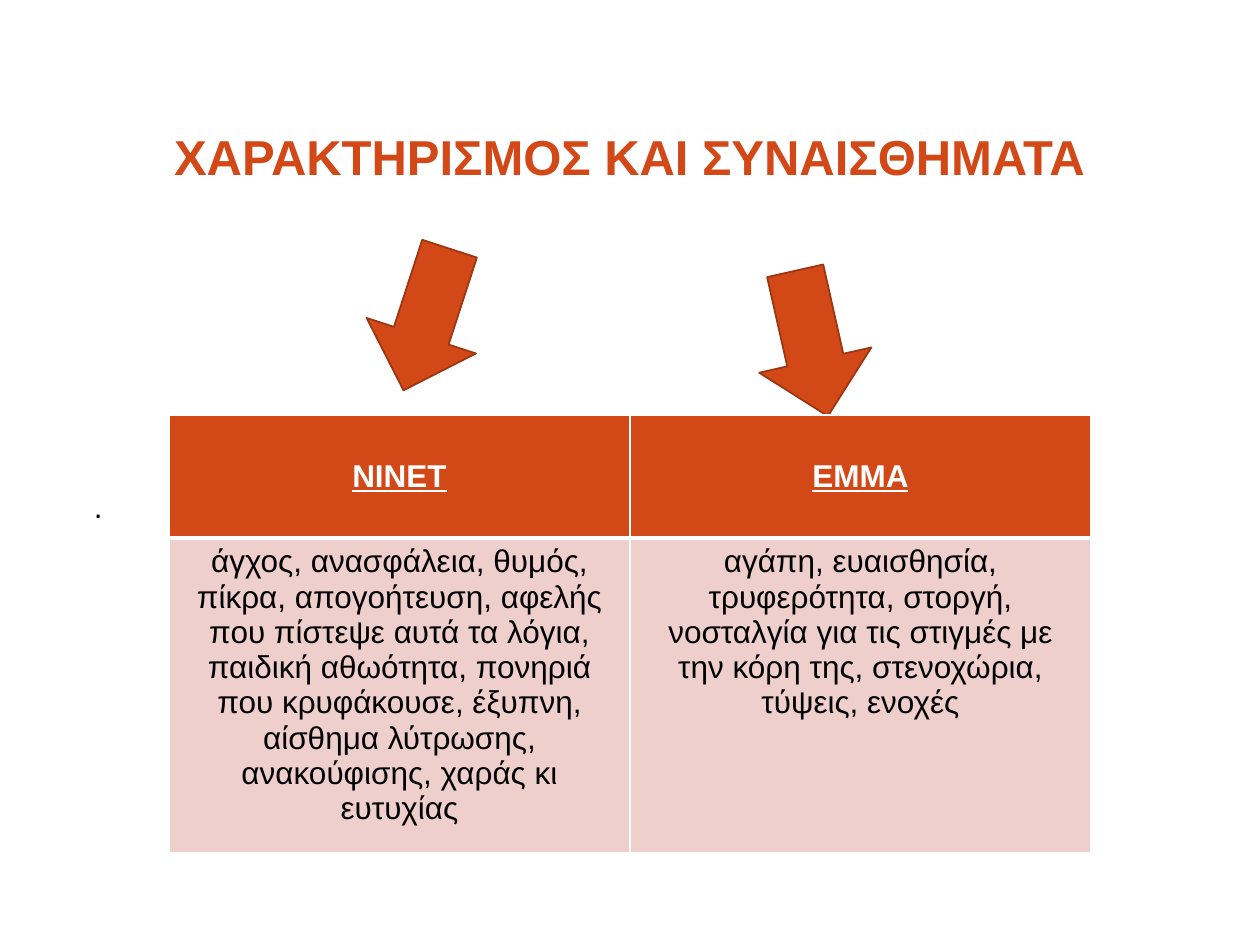
from dataclasses import dataclass

from lxml import etree
from pptx import Presentation
from pptx.dml.color import RGBColor
from pptx.enum.shapes import MSO_SHAPE
from pptx.enum.text import MSO_ANCHOR, PP_ALIGN
from pptx.oxml.ns import qn
from pptx.util import Emu, Pt

EMU_PER_PX = 914400 / 126
RIGHT_ARROW = MSO_SHAPE.RIGHT_ARROW
CENTER, LEFT = PP_ALIGN.CENTER, PP_ALIGN.LEFT
TOP, MIDDLE, BOTTOM = MSO_ANCHOR.TOP, MSO_ANCHOR.MIDDLE, MSO_ANCHOR.BOTTOM

ORANGE, DARK_ORANGE, PINK = "D34817", "9C3511", "EFCFCC"
WHITE, BLACK = "FFFFFF", "000000"


@dataclass
class Arrow:
    left: int
    top: int
    rotation: float


@dataclass
class Column:
    heading: str
    feelings: list[str]


ARROWS = [Arrow(737, 286, 77.3), Arrow(352, 262, 108)]
COLUMNS = [
    Column("ΝΙΝΕΤ", [
        "άγχος, ανασφάλεια, θυμός, πίκρα, απογοήτευση, αφελής που πίστεψε "
        "αυτά τα λόγια, παιδική αθωότητα, πονηριά που κρυφάκουσε, έξυπνη, "
        "αίσθημα λύτρωσης, ανακούφισης, χαράς κι ευτυχίας",
    ]),
    Column("ΕΜΜΑ", [
        "αγάπη, ευαισθησία, τρυφερότητα, στοργή,",
        "νοσταλγία για τις στιγμές με την κόρη της, στενοχώρια, τύψεις, ενοχές",
    ]),
]


def px(length: int) -> Emu:
    return Emu(round(length * EMU_PER_PX))


def color(hex_code: str) -> RGBColor:
    return RGBColor.from_string(hex_code)


def write_text(frame, lines: list[str], *, size: int = 18, fill: str = BLACK,
               bold: bool = False, underline: bool = False,
               align=CENTER, spacing: float = 1.0) -> None:
    for index, line in enumerate(lines):
        paragraph = frame.add_paragraph() if index else frame.paragraphs[0]
        paragraph.alignment = align
        paragraph.line_spacing = spacing
        run = paragraph.add_run()
        run.text = line
        run.font.name = "Arial"
        run.font.size = Pt(size)
        run.font.bold = bold
        run.font.underline = underline
        run.font.color.rgb = color(fill)


def add_text_box(slide, left: int, top: int, width: int, height: int,
                 text: str, *, anchor=TOP, bottom_inset: int = 0, **text_format) -> None:
    frame = slide.shapes.add_textbox(px(left), px(top), px(width), px(height)).text_frame
    frame.word_wrap = True
    frame.vertical_anchor = anchor
    frame.margin_left = frame.margin_right = frame.margin_top = 0
    frame.margin_bottom = px(bottom_inset)
    write_text(frame, [text], **text_format)


def add_arrow(slide, arrow: Arrow) -> None:
    shape = slide.shapes.add_shape(
        RIGHT_ARROW, px(arrow.left), px(arrow.top), px(149), px(115))
    shape.rotation = arrow.rotation
    shape.shadow.inherit = False
    shape.fill.solid()
    shape.fill.fore_color.rgb = color(ORANGE)
    shape.line.color.rgb = color(DARK_ORANGE)
    shape.line.width = Pt(1)


def style_cell(cell, fill: str, **border_widths: int) -> None:
    """Draw white borders (widths in points by side L, R, T, B), then fill."""
    properties = cell._tc.get_or_add_tcPr()
    for side, width in border_widths.items():
        line = etree.SubElement(properties, qn(f"a:ln{side}"), w=str(Pt(width)))
        solid = etree.SubElement(line, qn("a:solidFill"))
        etree.SubElement(solid, qn("a:srgbClr"), val=WHITE)
    cell.fill.solid()
    cell.fill.fore_color.rgb = color(fill)


def add_feelings_table(slide) -> None:
    table = slide.shapes.add_table(
        2, len(COLUMNS), px(169), px(415), px(922), px(417)).table
    for row, height in zip(table.rows, (123, 294)):
        row.height = px(height)
    for index, column in enumerate(COLUMNS):
        heading, body = table.cell(0, index), table.cell(1, index)
        style_cell(heading, ORANGE, L=1, R=1, T=1, B=3)
        heading.vertical_anchor = MIDDLE
        write_text(heading.text_frame, [column.heading],
                   fill=WHITE, bold=True, underline=True)
        style_cell(body, PINK, L=1, R=1, T=3, B=1)
        write_text(body.text_frame, column.feelings)


def main() -> None:
    presentation = Presentation()
    presentation.slide_width, presentation.slide_height = px(1260), px(945)
    slide = presentation.slides.add_slide(presentation.slide_layouts[6])
    add_text_box(slide, 94, 491, 1071, 36, ".", align=LEFT, spacing=0.9)
    add_text_box(slide, 94, 71, 1071, 127, "ΧΑΡΑΚΤΗΡΙΣΜΟΣ ΚΑΙ ΣΥΝΑΙΣΘΗΜΑΤΑ",
                 anchor=BOTTOM, bottom_inset=12, size=28, fill=ORANGE,
                 bold=True, spacing=0.9)
    for arrow in ARROWS:
        add_arrow(slide, arrow)
    add_feelings_table(slide)
    presentation.save("out.pptx")


if __name__ == "__main__":
    main()
